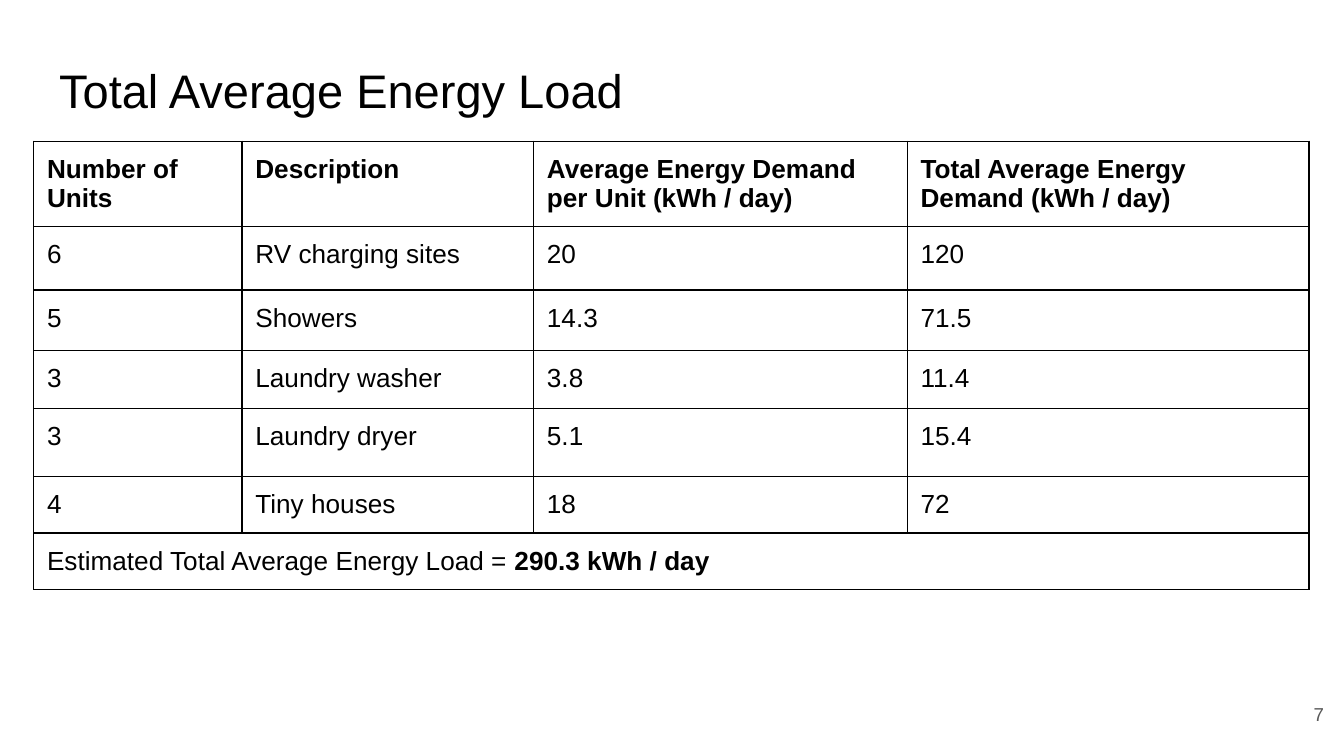
from dataclasses import dataclass

import lxml.etree
import pptx
import pptx.dml.color
import pptx.enum.text
import pptx.oxml.ns
import pptx.util

FONT = "Arial"
BLACK, WHITE, GRAY = "000000", "FFFFFF", "595959"
SLIDE_W = 10
SLIDE_H = SLIDE_W * 9 / 16
INSET = pptx.util.Inches(0.1)
ANCHOR = pptx.enum.text.MSO_ANCHOR
ALIGN = pptx.enum.text.PP_ALIGN

COLUMN_WIDTHS = (1.55, 2.17, 2.78, 2.99)
HEADERS = (
    "Number of Units",
    "Description",
    "Average Energy Demand per Unit (kWh / day)",
    "Total Average Energy Demand (kWh / day)",
)
HEADER_HEIGHT, TOTAL_HEIGHT = 0.63, 0.42


@dataclass(frozen=True)
class Box:
    left: float
    top: float
    width: float
    height: float

    def emu(self) -> tuple:
        return (
            pptx.util.Inches(self.left * SLIDE_W),
            pptx.util.Inches(self.top * SLIDE_H),
            pptx.util.Inches(self.width * SLIDE_W),
            pptx.util.Inches(self.height * SLIDE_H),
        )


@dataclass(frozen=True)
class Load:
    units: str
    description: str
    per_unit: str
    total: str
    height: float

    def texts(self) -> tuple:
        return self.units, self.description, self.per_unit, self.total


LOADS = (
    Load("6", "RV charging sites", "20", "120", 0.47),
    Load("5", "Showers", "14.3", "71.5", 0.45),
    Load("3", "Laundry washer", "3.8", "11.4", 0.43),
    Load("3", "Laundry dryer", "5.1", "15.4", 0.51),
    Load("4", "Tiny houses", "18", "72", 0.42),
)


def rgb(color: str) -> pptx.dml.color.RGBColor:
    return pptx.dml.color.RGBColor.from_string(color)


def format_run(r, size: float, color: str = BLACK, bold: bool = False) -> None:
    r.font.name = FONT
    r.font.size = pptx.util.Pt(size)
    r.font.bold = bold
    r.font.color.rgb = rgb(color)


def fill_box(sp, text: str, size: float, color: str, anchor, align) -> None:
    tf = sp.text_frame
    tf.text = text
    tf.word_wrap = True
    tf.auto_size = pptx.enum.text.MSO_AUTO_SIZE.NONE
    tf.vertical_anchor = anchor
    tf.margin_left = tf.margin_right = tf.margin_top = tf.margin_bottom = INSET
    p = tf.paragraphs[0]
    p.alignment = align
    format_run(p.runs[0], size, color)


def add_borders(cell, color: str, width: float) -> None:
    tc_pr = cell._tc.get_or_add_tcPr()
    for side in ("a:lnL", "a:lnR", "a:lnT", "a:lnB"):
        ln = lxml.etree.SubElement(tc_pr, pptx.oxml.ns.qn(side))
        ln.set("w", str(pptx.util.Pt(width)))
        fill = lxml.etree.SubElement(ln, pptx.oxml.ns.qn("a:solidFill"))
        lxml.etree.SubElement(fill, pptx.oxml.ns.qn("a:srgbClr")).set("val", color)


def style_cell(cell) -> None:
    cell.margin_left = cell.margin_right = INSET
    cell.margin_top = cell.margin_bottom = INSET
    add_borders(cell, BLACK, 0.75)
    cell.fill.solid()
    cell.fill.fore_color.rgb = rgb(WHITE)


def write_cell(cell, parts: tuple) -> None:
    p = cell.text_frame.paragraphs[0]
    for text, bold in parts:
        r = p.add_run()
        r.text = text
        format_run(r, 14, bold=bold)


def add_load_table(s, left: float, top: float) -> None:
    heights = (HEADER_HEIGHT, *(load.height for load in LOADS), TOTAL_HEIGHT)
    box = Box(left, top, sum(COLUMN_WIDTHS) / SLIDE_W, sum(heights) / SLIDE_H)
    table = s.shapes.add_table(len(heights), len(COLUMN_WIDTHS), *box.emu()).table
    table.first_row = table.horz_banding = False
    for column, width in zip(table.columns, COLUMN_WIDTHS):
        column.width = pptx.util.Inches(width)
    for row, height in zip(table.rows, heights):
        row.height = pptx.util.Inches(height)
    for cell in table.iter_cells():
        style_cell(cell)
    for row, texts in enumerate((HEADERS, *(load.texts() for load in LOADS))):
        for col, text in enumerate(texts):
            write_cell(table.cell(row, col), ((text, row == 0),))
    last = len(heights) - 1
    total = table.cell(last, 0)
    total.merge(table.cell(last, len(COLUMN_WIDTHS) - 1))
    write_cell(total, (
        ("Estimated Total Average Energy Load =", False),
        (" 290.3 kWh / day", True),
    ))


def main() -> None:
    prs = pptx.Presentation()
    prs.slide_width = pptx.util.Inches(SLIDE_W)
    prs.slide_height = pptx.util.Inches(SLIDE_H)
    s = prs.slides.add_slide(prs.slide_layouts[5])
    s.background.fill.solid()
    s.background.fill.fore_color.rgb = rgb(WHITE)

    title = s.shapes.title
    title.left, title.top, title.width, title.height = Box(
        0.034, 0.35 / SLIDE_H, 0.932, 0.63 / SLIDE_H).emu()
    fill_box(title, "Total Average Energy Load", 25.2, BLACK,
             ANCHOR.BOTTOM, ALIGN.LEFT)

    add_load_table(s, 0.025, 1.05 / SLIDE_H)

    page_number = s.shapes.add_textbox(
        *Box(0.935, 5.1 / SLIDE_H, 0.06, 0.43 / SLIDE_H).emu())
    fill_box(page_number, "7", 10, GRAY, ANCHOR.MIDDLE, ALIGN.RIGHT)

    prs.save("out.pptx")


if __name__ == "__main__":
    main()
